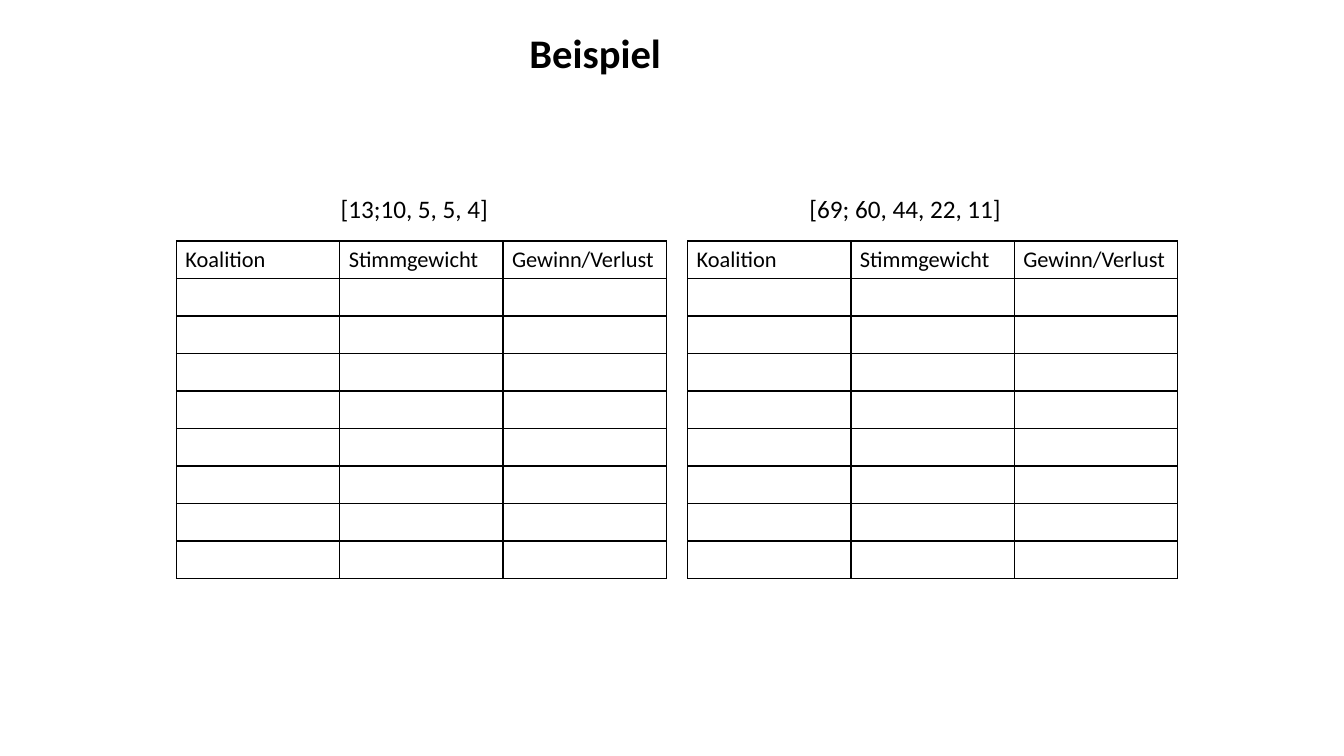
from lxml.etree import SubElement
from pptx import Presentation
from pptx.dml.color import RGBColor
from pptx.enum.text import MSO_ANCHOR, MSO_AUTO_SIZE, PP_ALIGN
from pptx.oxml.ns import qn
from pptx.util import Inches, Pt

TITLE = "Beispiel"
HEADS = ["Koalition", "Stimmgewicht", "Gewinn/Verlust"]
GAMES = [
    {"label": "[13;10, 5, 5, 4]", "left": 1.75, "text_left": 3.28, "width": 1.74},
    {"label": "[69; 60, 44, 22, 11]", "left": 6.82, "text_left": 7.93, "width": 2.13},
]
ROWS = 9
TOP, COL, HEIGHT = 2.39, 1.62, 3.31
FONT, BLACK = "Calibri", "000000"


def color(code):
    return RGBColor.from_string(code)


def style(par, size, bold=False):
    for run in par.runs:
        run.font.name = FONT
        run.font.size = Pt(size)
        run.font.bold = bold
        run.font.color.rgb = color(BLACK)


def border(cell):
    props = cell._tc.get_or_add_tcPr()
    for side in ("a:lnL", "a:lnR", "a:lnT", "a:lnB"):
        line = SubElement(props, qn(side), w=str(Pt(1)))
        fill = SubElement(line, qn("a:solidFill"))
        SubElement(fill, qn("a:srgbClr"), val=BLACK)


def add_grid(slide, left):
    frame = slide.shapes.add_table(
        ROWS, len(HEADS), Inches(left), Inches(TOP),
        Inches(COL * len(HEADS)), Inches(HEIGHT))
    table = frame.table
    table.first_row = False
    table.horz_banding = False
    for col in table.columns:
        col.width = Inches(COL)
    for row in table.rows:
        row.height = Inches(HEIGHT / ROWS)
    for cell in table.iter_cells():
        border(cell)
        cell.fill.background()
        cell.margin_left = cell.margin_right = Inches(0.09)
        cell.margin_top = cell.margin_bottom = Inches(0.05)
        par = cell.text_frame.paragraphs[0]
        SubElement(par._p, qn("a:endParaRPr"), sz="1600")
    for cell, head in zip(table.rows[0].cells, HEADS):
        cell.text_frame.text = head
        style(cell.text_frame.paragraphs[0], 16)


def add_label(slide, game):
    box = slide.shapes.add_textbox(
        Inches(game["text_left"]), Inches(1.87), Inches(game["width"]), Inches(0.4))
    frame = box.text_frame
    frame.word_wrap = False
    frame.auto_size = MSO_AUTO_SIZE.SHAPE_TO_FIT_TEXT
    frame.text = game["label"]
    style(frame.paragraphs[0], 18)


def add_title(slide):
    title = slide.shapes.title
    title.left, title.top = Inches(1.75), Inches(0.11)
    title.width, title.height = Inches(8.31), Inches(0.81)
    frame = title.text_frame
    frame.text = TITLE
    frame.auto_size = MSO_AUTO_SIZE.NONE
    frame.vertical_anchor = MSO_ANCHOR.MIDDLE
    frame.margin_left = frame.margin_right = Inches(0.09)
    frame.margin_top = frame.margin_bottom = Inches(0.04)
    par = frame.paragraphs[0]
    par.alignment = PP_ALIGN.CENTER
    style(par, 29, True)


def main():
    deck = Presentation()
    deck.slide_width, deck.slide_height = Inches(13.33), Inches(7.5)
    slide = deck.slides.add_slide(deck.slide_layouts[5])
    add_title(slide)
    for game in GAMES:
        add_grid(slide, game["left"])
    for game in GAMES:
        add_label(slide, game)
    deck.save("out.pptx")


if __name__ == "__main__":
    main()
